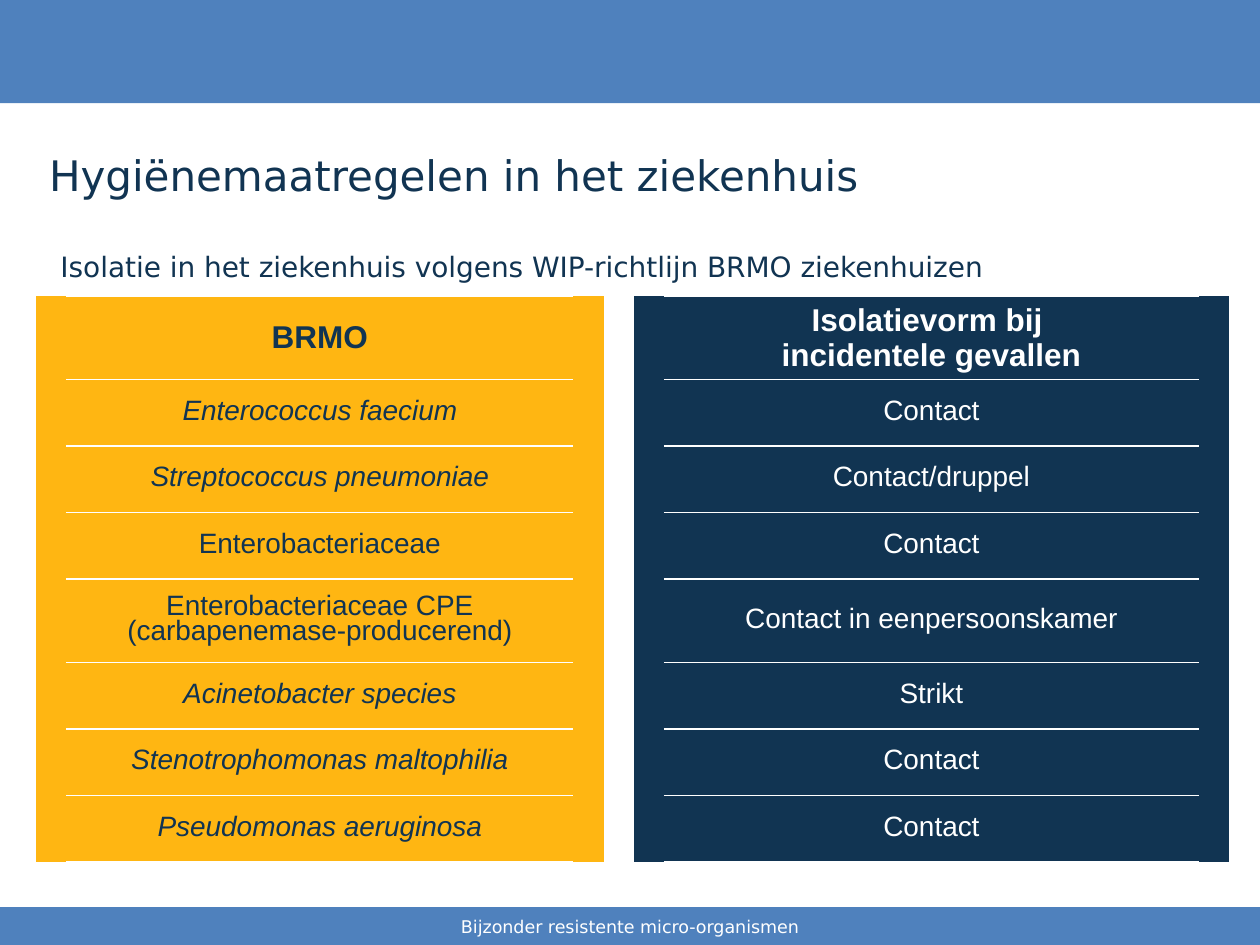
from dataclasses import dataclass

from lxml import etree
from pptx import Presentation
from pptx.dml.color import RGBColor
from pptx.enum.shapes import MSO_SHAPE
from pptx.enum.text import MSO_ANCHOR, PP_ALIGN
from pptx.oxml.ns import qn
from pptx.util import Cm, Pt

RECTANGLE = MSO_SHAPE.RECTANGLE
MIDDLE = MSO_ANCHOR.MIDDLE
LEFT, CENTER = PP_ALIGN.LEFT, PP_ALIGN.CENTER


@dataclass(frozen=True)
class Theme:
    """Colours, fonts and type sizes of the slide."""
    band: str = "4F81BD"
    navy: str = "113452"
    amber: str = "FFB612"
    white: str = "FFFFFF"
    text_font: str = "DejaVu Sans"
    table_font: str = "Arial"
    title: int = 24
    header: int = 18
    body: int = 16
    footer: int = 10


@dataclass(frozen=True)
class Box:
    """A region of the slide in centimetres."""
    left: float
    top: float
    width: float
    height: float

    def lengths(self):
        """Return left, top, width and height as slide lengths."""
        return Cm(self.left), Cm(self.top), Cm(self.width), Cm(self.height)


THEME = Theme()
NO_STYLE_NO_GRID = "{2D5ABB26-0587-4C30-8999-92F81FD0307C}"
MARGIN = 0.6
ORGANISM_WIDTH, ISOLATION_WIDTH = 10.22, 10.79
HEADER_HEIGHT, ROW_HEIGHT, TALL_ROW_HEIGHT = 1.65, 1.34, 1.6
HEADERS = ("BRMO", "Isolatievorm bij \vincidentele gevallen")
MEASURES = [
    ("Enterococcus faecium", True, "Contact"),
    ("Streptococcus pneumoniae", True, "Contact/druppel"),
    ("Enterobacteriaceae", False, "Contact"),
    ("Enterobacteriaceae CPE (carbapenemase-producerend)", False,
     "Contact in eenpersoonskamer"),
    ("Acinetobacter species", True, "Strikt"),
    ("Stenotrophomonas maltophilia", True, "Contact"),
    ("Pseudomonas aeruginosa", True, "Contact"),
]


def style_font(font, name, size, color, bold=False, italic=False):
    """Apply typeface, size, colour and weight to a font."""
    font.name = name
    font.size = Pt(size)
    font.color.rgb = RGBColor.from_string(color)
    font.bold = bold
    font.italic = italic


def add_band(slide, box):
    """Draw a full-width coloured band."""
    band = slide.shapes.add_shape(RECTANGLE, *box.lengths())
    band.shadow.inherit = False
    band.fill.solid()
    band.fill.fore_color.rgb = RGBColor.from_string(THEME.band)
    band.line.fill.background()


def add_text(slide, box, text, size, color, align=LEFT, line_spacing=None):
    """Place one vertically centred line of text in a box."""
    frame = slide.shapes.add_textbox(*box.lengths()).text_frame
    frame.word_wrap = True
    frame.vertical_anchor = MIDDLE
    frame.text = text
    paragraph = frame.paragraphs[0]
    paragraph.alignment = align
    paragraph.line_spacing = line_spacing
    style_font(paragraph.runs[0].font, THEME.text_font, size, color)


def add_footer(slide, box):
    """Draw the footer band with its centred caption."""
    add_band(slide, box)
    add_text(slide, box, "Bijzonder resistente micro-organismen",
             THEME.footer, THEME.white, CENTER)


def paint_cell(cell, fill, ruled):
    """Fill a cell and rule it above and below in white if asked."""
    properties = cell._tc.get_or_add_tcPr()
    for side in "LRTB":
        border = etree.SubElement(properties, qn(f"a:ln{side}"), w=str(Pt(1)))
        if ruled and side in "TB":
            paint = etree.SubElement(border, qn("a:solidFill"))
            etree.SubElement(paint, qn("a:srgbClr"), val=THEME.white)
        else:
            etree.SubElement(border, qn("a:noFill"))
    cell.fill.solid()
    cell.fill.fore_color.rgb = RGBColor.from_string(fill)


def write_cell(cell, text, color, is_header, italic):
    """Write centred header or body text into a cell."""
    cell.vertical_anchor = MIDDLE
    cell.margin_left = cell.margin_right = Cm(0.1)
    cell.margin_top = cell.margin_bottom = Cm(0.08 if is_header else 0.3)
    cell.text = text
    paragraph = cell.text_frame.paragraphs[0]
    paragraph.alignment = CENTER
    paragraph.line_spacing = 1.0 if is_header else 0.8
    size = THEME.header if is_header else THEME.body
    for run in paragraph.runs:
        style_font(run.font, THEME.table_font, size, color, is_header, italic)


def add_measures_table(slide, box):
    """Build the two panels of organisms and isolation forms as one table."""
    rows = [(HEADERS[0], False, HEADERS[1])] + MEASURES
    widths = [MARGIN, ORGANISM_WIDTH, MARGIN, MARGIN,
              MARGIN, ISOLATION_WIDTH, MARGIN]
    fills = [THEME.amber] * 3 + [THEME.white] + [THEME.navy] * 3
    graphic = slide.shapes.add_table(len(rows), len(widths), *box.lengths())
    table = graphic.table
    table.first_row = table.horz_banding = False
    table._tbl.tblPr.find(qn("a:tableStyleId")).text = NO_STYLE_NO_GRID
    for column, width in zip(table.columns, widths):
        column.width = Cm(width)
    for row_index, (organism, italic, isolation) in enumerate(rows):
        is_header = row_index == 0
        is_tall = "CPE" in organism
        table.rows[row_index].height = Cm(
            HEADER_HEIGHT if is_header
            else TALL_ROW_HEIGHT if is_tall else ROW_HEIGHT)
        contents = {1: (organism, THEME.navy, is_header, italic),
                    5: (isolation, THEME.white, is_header, False)}
        for column_index, fill in enumerate(fills):
            cell = table.cell(row_index, column_index)
            paint_cell(cell, fill, column_index in contents)
            if column_index in contents:
                write_cell(cell, *contents[column_index])


def main():
    """Build and save the slide."""
    deck = Presentation()
    deck.slide_width, deck.slide_height = Cm(25.4), Cm(19.05)
    slide = deck.slides.add_slide(deck.slide_layouts[6])
    add_band(slide, Box(0, 0, 25.4, 2.08))
    add_footer(slide, Box(0, 18.29, 25.4, 0.76))
    add_text(slide, Box(0.74, 2.51, 17.96, 2.03),
             "Hygiënemaatregelen in het ziekenhuis", THEME.title, THEME.navy)
    add_text(slide, Box(0.97, 4.75, 23.7, 1.19),
             "Isolatie in het ziekenhuis volgens WIP-richtlijn BRMO ziekenhuizen",
             THEME.body, THEME.navy, line_spacing=Pt(20))
    add_measures_table(slide, Box(0.73, 5.97, 24.01, 11.29))
    deck.save("out.pptx")


if __name__ == "__main__":
    main()
